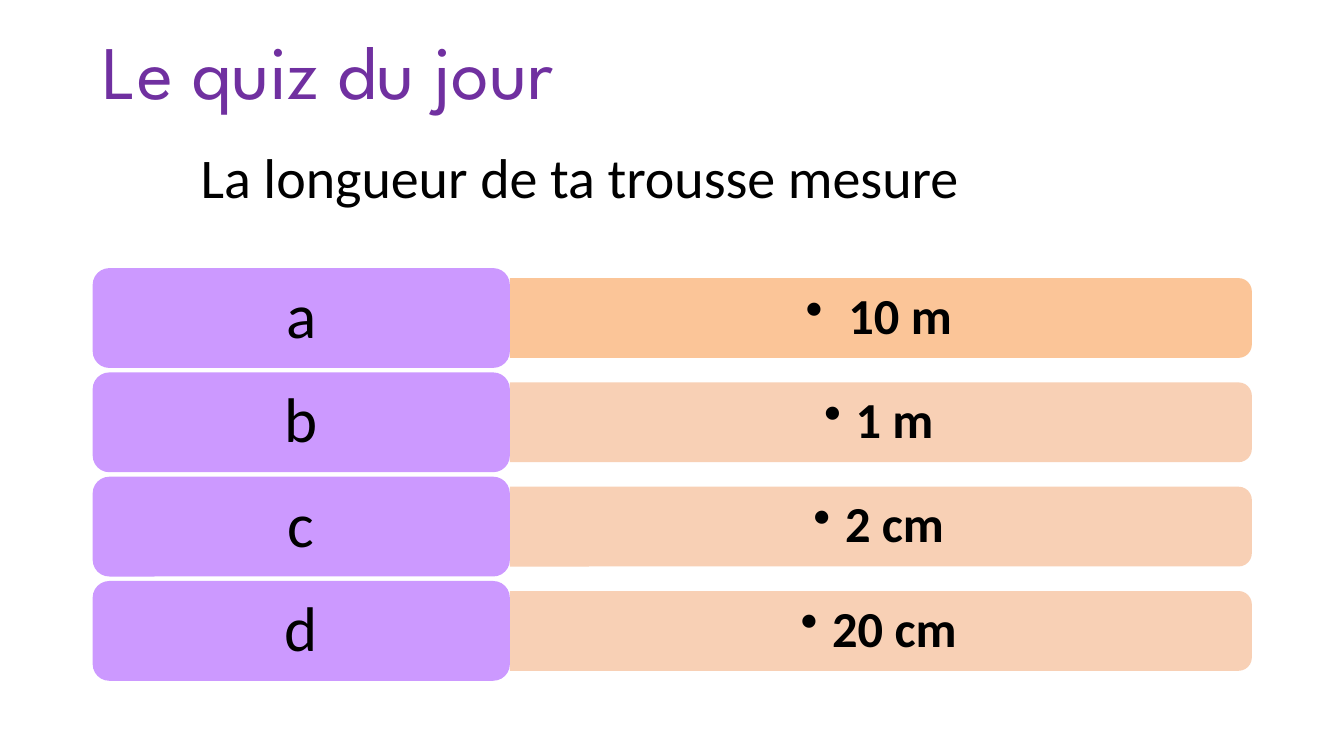
from lxml import etree
from pptx import Presentation
from pptx.dml.color import RGBColor
from pptx.enum import shapes, text
from pptx.oxml import ns
from pptx.util import Pt

COLORS = {"title": "7030A0", "label": "CC99FF", "first": "FBBF8D",
          "bar": "F8CBAD", "ink": "000000"}
ANSWERS = [("a", " 10 m"), ("b", "1 m"), ("c", "2 cm"), ("d", "20 cm")]

LEFT, TOP, STEP = 66.2, 191.5, 74.5
LABEL_W, LABEL_H = 298, 71.3
BAR_W, BAR_H = 530, 57
TEXT_W, TEXT_H = 527, 51


def rgb(name):
    return RGBColor.from_string(COLORS[name])


def write(shape, words, size, color="ink", font="Calibri", bold=False,
          align=text.PP_ALIGN.CENTER, space=0.9):
    frame = shape.text_frame
    frame.word_wrap = True
    frame.auto_size = text.MSO_AUTO_SIZE.NONE
    frame.vertical_anchor = text.MSO_ANCHOR.MIDDLE
    frame.text = words
    para = frame.paragraphs[0]
    para.alignment = align
    para.line_spacing = space
    face = para.runs[0].font
    face.name, face.size, face.bold = font, Pt(size), bold
    face.color.rgb = rgb(color)


def inset(shape, side, edge):
    frame = shape.text_frame
    frame.margin_left = frame.margin_right = Pt(side)
    frame.margin_top = frame.margin_bottom = Pt(edge)


def add_bullet(para):
    props = para._p.get_or_add_pPr()
    props.set("marL", str(Pt(22.5)))
    props.set("indent", str(-Pt(22.5)))
    etree.SubElement(props, ns.qn("a:buChar")).set("char", "•")


def add_block(group, kind, box, color):
    block = group.shapes.add_shape(kind, *map(Pt, box))
    block.shadow.inherit = False
    block.fill.solid()
    block.fill.fore_color.rgb = rgb(color)
    block.line.fill.background()
    return block


def add_bar(group, mid, color):
    """Add a translucent bar with its right corners rounded, centred on mid."""
    center = LEFT + LABEL_W + BAR_W / 2
    box = (center - BAR_H / 2, mid - BAR_W / 2, BAR_H, BAR_W)
    bar = add_block(group, shapes.MSO_SHAPE.ROUND_2_SAME_RECTANGLE, box, color)
    bar.rotation = 90
    tint = bar.fill._xPr.find(".//" + ns.qn("a:srgbClr"))
    etree.SubElement(tint, ns.qn("a:alpha")).set("val", "90000")


def add_answer(group, row, letter, words):
    top = TOP + row * STEP
    mid = top + LABEL_H / 2
    add_bar(group, mid, "bar" if row else "first")

    answer = group.shapes.add_textbox(Pt(LEFT + LABEL_W), Pt(mid - TEXT_H / 2),
                                      Pt(TEXT_W), Pt(TEXT_H))
    write(answer, words, 36, bold=True)
    inset(answer, 10.8, 5)
    para = answer.text_frame.paragraphs[0]
    para.level = 1
    add_bullet(para)

    label = add_block(group, shapes.MSO_SHAPE.ROUNDED_RECTANGLE,
                      (LEFT, top, LABEL_W, LABEL_H), "label")
    write(label, letter, 45)
    inset(label, 16.5, 10)


def add_title(slide, words):
    title = slide.shapes.title
    title.left, title.top = Pt(66.2), Pt(19.4)
    title.width, title.height = Pt(828), Pt(67.7)
    write(title, words, 54, "title", "League Spartan",
          align=text.PP_ALIGN.LEFT)


def add_question(slide, words):
    box = slide.shapes.add_textbox(Pt(0), Pt(98), Pt(828), Pt(55.4))
    write(box, words, 40, space=1.0)


def main():
    deck = Presentation()
    deck.slide_width, deck.slide_height = Pt(960), Pt(540)
    slide = deck.slides.add_slide(deck.slide_layouts[5])
    add_title(slide, "Le quiz du jour")
    group = slide.shapes.add_group_shape()
    for row, (letter, words) in enumerate(ANSWERS):
        add_answer(group, row, letter, words)
    add_question(slide, "La longueur de ta trousse mesure")
    deck.save("out.pptx")


if __name__ == "__main__":
    main()
